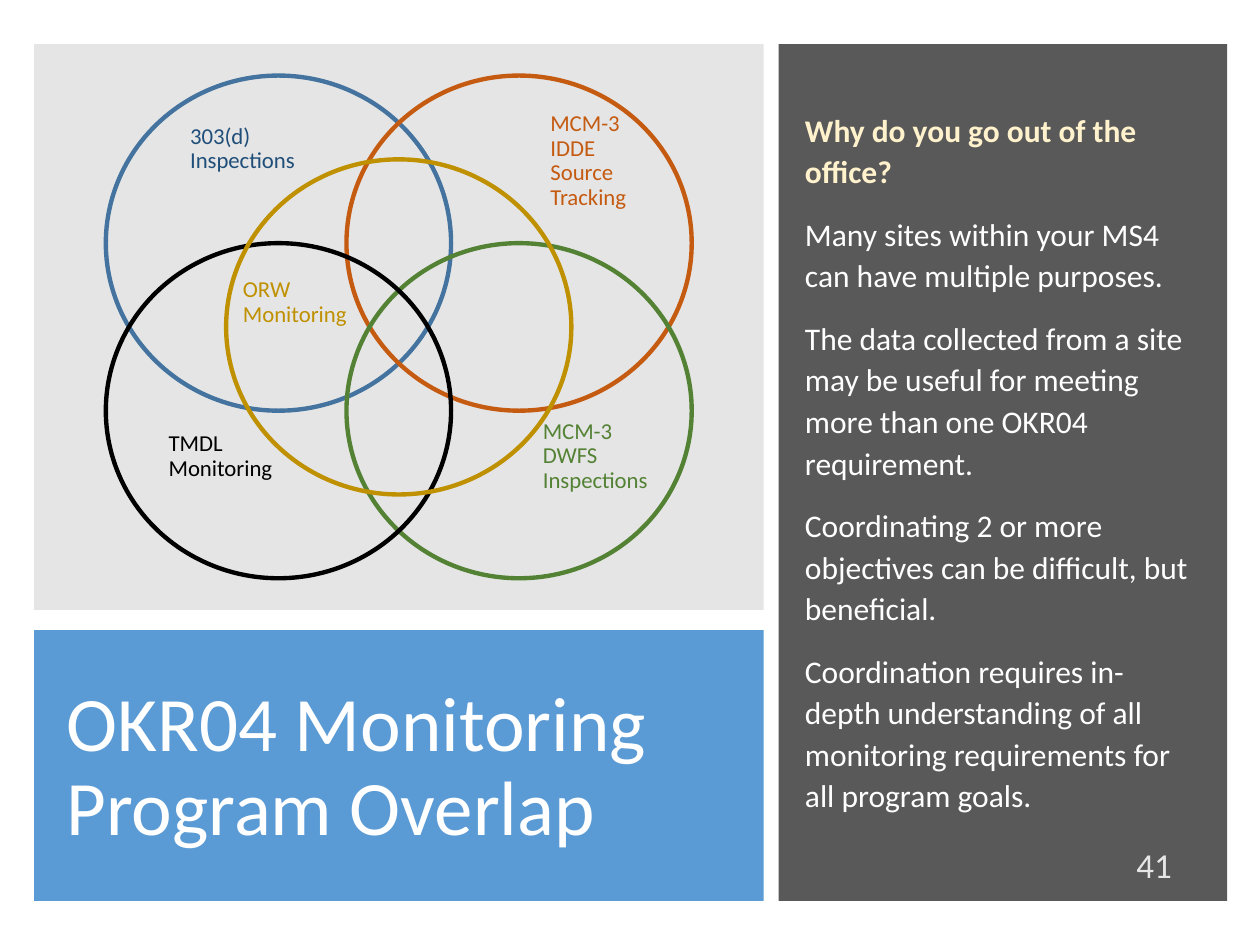
from lxml import etree
from pptx import Presentation
from pptx.dml.color import RGBColor
from pptx.enum.shapes import MSO_SHAPE
from pptx.enum.text import MSO_ANCHOR, PP_ALIGN
from pptx.oxml.ns import qn
from pptx.util import Inches, Pt

RECTANGLE, OVAL = MSO_SHAPE.RECTANGLE, MSO_SHAPE.OVAL
TOP, MIDDLE = MSO_ANCHOR.TOP, MSO_ANCHOR.MIDDLE
RIGHT = PP_ALIGN.RIGHT
WHITE, BLUE, ORANGE = "FFFFFF", "43739E", "C55A11"
GREEN, GOLD, BLACK = "548235", "BF9000", "000000"

deck = Presentation()
deck.slide_width, deck.slide_height = Inches(10), Inches(7.5)
page = deck.slides.add_slide(deck.slide_layouts[6])


def color(value):
    return RGBColor.from_string(value)


def add_text(place, lines, size, anchor=TOP, **formats):
    """Add a text box; lines holds (text, colour, bold) for each paragraph."""
    box = page.shapes.add_textbox(*map(Inches, place))
    frame = box.text_frame
    frame.word_wrap = True
    frame.vertical_anchor = anchor
    for index, (text, shade, bold) in enumerate(lines):
        para = frame.paragraphs[0] if index == 0 else frame.add_paragraph()
        for name, value in formats.items():
            setattr(para, name, value)
        span = para.add_run()
        span.text = text
        for name, value in {"name": "Calibri", "size": Pt(size), "bold": bold}.items():
            setattr(span.font, name, value)
        span.font.color.rgb = color(shade)


# Background panels: diagram, title, sidebar
panels = [
    ((0.27, 0.35, 5.79, 4.49), "7F7F7F", 20),
    ((0.27, 5, 5.79, 2.15), "5B9BD5", 100),
    ((6.18, 0.35, 3.56, 6.8), "595959", 100),
]
for place, shade, opacity in panels:
    panel = page.shapes.add_shape(RECTANGLE, *map(Inches, place))
    panel.shadow.inherit = False
    panel.fill.solid()
    panel.fill.fore_color.rgb = color(shade)
    panel.line.fill.background()
    if opacity < 100:
        tint = panel.fill._xPr.find(".//" + qn("a:srgbClr"))
        etree.SubElement(tint, qn("a:alpha"), val=str(opacity * 1000))

# Title
add_text((0.43, 5.21, 5.41, 1.78), [("OKR04 Monitoring Program Overlap", WHITE, False)],
         44, MIDDLE, line_spacing=0.9)

# Sidebar text
reasons = [
    "Many sites within your MS4 can have multiple purposes.",
    "The data collected from a site may be useful for meeting more than one OKR04 requirement.",
    "Coordinating 2 or more objectives can be difficult, but beneficial.",
    "Coordination requires in-depth understanding of all monitoring requirements "
    "for all program goals.",
]
sidebar = [("Why do you go out of the office?", "FFF2CC", True)]
sidebar += [(reason, WHITE, False) for reason in reasons]
add_text((6.29, 0.6, 3.28, 6.11), sidebar, 18, MIDDLE, line_spacing=1.1, space_after=Pt(12))

# Slide number
add_text((8.6, 6.71, 0.8, 0.3), [("41", "E7E6E6", False)], 20, MIDDLE,
         alignment=RIGHT, space_after=Pt(6))

# Venn circles: four corners and the centre, in steps of half the spacing
left, top, step_x, step_y = 0.84, 0.6, 0.955, 0.665
circles = [(0, 0, BLUE), (2, 0, ORANGE), (2, 2, GREEN), (0, 2, BLACK), (1, 1, GOLD)]
for column, row, shade in circles:
    circle = page.shapes.add_shape(
        OVAL, Inches(left + column * step_x), Inches(top + row * step_y),
        Inches(2.74), Inches(2.66))
    circle.shadow.inherit = False
    circle.fill.background()
    circle.line.color.rgb = color(shade)
    circle.line.width = Pt(2.5)

# Circle labels
labels = [
    ((1.41, 0.94, 1.11, 0.56), "303(d) Inspections", "1F4E79"),
    ((1.24, 3.38, 1.11, 0.56), "TMDL Monitoring", BLACK),
    ((4.27, 0.84, 1.03, 1.03), "MCM-3 IDDE Source Tracking", ORANGE),
    ((1.83, 2.16, 1.11, 0.56), "ORW Monitoring", GOLD),
    ((4.21, 3.28, 1.11, 0.8), "MCM-3 DWFS Inspections", GREEN),
]
for place, text, shade in labels:
    add_text(place, [(text, shade, False)], 13, line_spacing=0.9, space_after=Pt(6))

deck.save("out.pptx")
